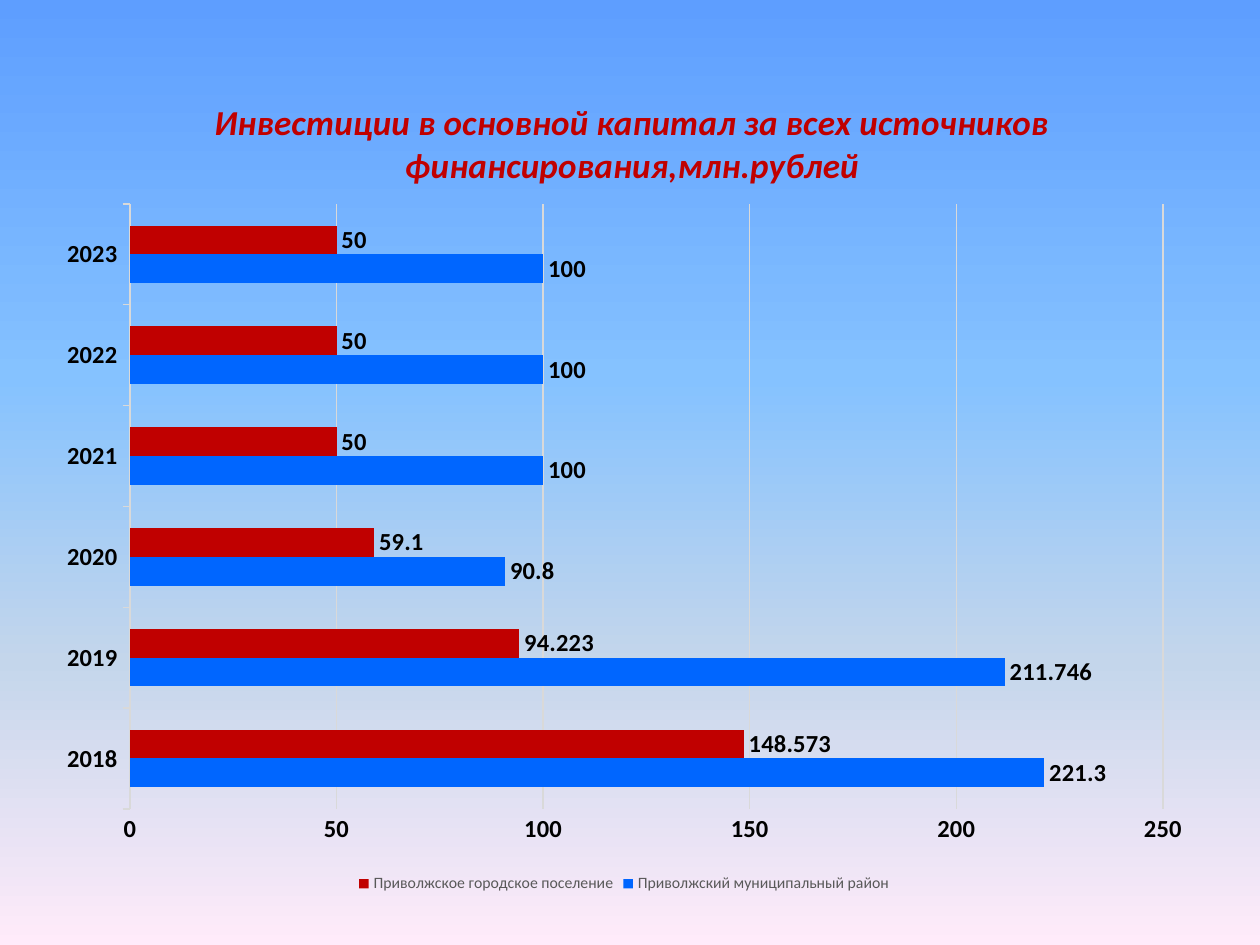
import dataclasses
import typing

import lxml.etree
import pptx
import pptx.chart.data
import pptx.dml.color
import pptx.enum.chart
import pptx.oxml.ns
import pptx.util

qn = pptx.oxml.ns.qn
SCALE = 914400 / 126


@dataclasses.dataclass(frozen=True)
class Theme:
    font: str = "Calibri"
    black: str = "000000"
    red: str = "C00000"
    blue: str = "0066FF"
    grid: str = "D9D9D9"
    legend: str = "595959"
    base_size: int = 10
    title_size: int = 20
    label_size: int = 14
    legend_size: int = 9
    hairline: float = 0.75
    sky: tuple = ((0, "5E9EFF"), (40, "85C2FF"), (70, "C4D6EB"), (100, "FFEBFA"))


@dataclasses.dataclass(frozen=True)
class Box:
    left: int
    top: int
    width: int = 0
    height: int = 0


@dataclasses.dataclass(frozen=True)
class Investment:
    name: str
    values: tuple
    color: str


THEME = Theme()
CHART = Box(44, 55, 1160, 843)
TITLE = Box(208, 91)
PLOT = Box(130, 204, 1033, 605)
YEARS = [str(year) for year in range(2018, 2024)]
INVESTMENTS = (
    Investment("Приволжский муниципальный район",
               (221.3, 211.746, 90.8, 100, 100, 100), THEME.blue),
    Investment("Приволжское городское поселение",
               (148.573, 94.223, 59.1, 50, 50, 50), THEME.red),
)


def px(length: int) -> int:
    return round(length * SCALE)


def rgb(color: str) -> pptx.dml.color.RGBColor:
    return pptx.dml.color.RGBColor.from_string(color)


def apply(target: typing.Any, values: dict) -> None:
    for name, value in values.items():
        setattr(target, name, value)


def style_font(font: typing.Any, size: int, color: str, **extra: bool) -> None:
    apply(font, {"name": THEME.font, "size": pptx.util.Pt(size), **extra})
    font.color.rgb = rgb(color)


def style_line(line: typing.Any) -> None:
    line.color.rgb = rgb(THEME.grid)
    line.width = pptx.util.Pt(THEME.hairline)


def paint_background(page: typing.Any) -> None:
    fill = page.background.fill
    fill.gradient()
    fill.gradient_angle = 270
    stops = page.element.find(".//" + qn("a:gsLst"))
    for stop in list(stops):
        stops.remove(stop)
    for position, color in THEME.sky:
        stop = lxml.etree.SubElement(stops, qn("a:gs"), pos=str(position * 1000))
        lxml.etree.SubElement(stop, qn("a:srgbClr"), val=color)


def place(element: typing.Any, index: int, box: Box, inner: bool = False) -> None:
    for old in element.findall(qn("c:layout")):
        element.remove(old)
    layout = lxml.etree.Element(qn("c:layout"))
    element.insert(index, layout)
    manual = lxml.etree.SubElement(layout, qn("c:manualLayout"))
    settings = {"layoutTarget": "inner"} if inner else {}
    settings |= {"xMode": "edge", "yMode": "edge",
                 "x": round((box.left - CHART.left) / CHART.width, 4),
                 "y": round((box.top - CHART.top) / CHART.height, 4)}
    if inner:
        settings |= {"w": round(box.width / CHART.width, 4),
                     "h": round(box.height / CHART.height, 4)}
    for name, value in settings.items():
        lxml.etree.SubElement(manual, qn("c:" + name), val=str(value))


def add_investment_chart(page: typing.Any) -> None:
    data = pptx.chart.data.CategoryChartData()
    data.categories = YEARS
    for investment in INVESTMENTS:
        data.add_series(investment.name, investment.values)
    chart = page.shapes.add_chart(
        pptx.enum.chart.XL_CHART_TYPE.BAR_CLUSTERED,
        px(CHART.left), px(CHART.top), px(CHART.width), px(CHART.height), data,
    ).chart
    style_font(chart.font, THEME.base_size, THEME.black)

    chart.has_title = True
    para = chart.chart_title.text_frame.paragraphs[0]
    span = para.add_run()
    span.text = "Инвестиции в основной капитал за всех источников финансирования,млн.рублей"
    style_font(span.font, THEME.title_size, THEME.red, bold=True, italic=True)
    chart.chart_title.include_in_layout = False

    chart.has_legend = True
    apply(chart.legend, {"position": pptx.enum.chart.XL_LEGEND_POSITION.BOTTOM,
                         "include_in_layout": False})
    style_font(chart.legend.font, THEME.legend_size, THEME.legend)

    marks = pptx.enum.chart.XL_TICK_MARK
    years, amounts = chart.category_axis, chart.value_axis
    for axis in (years, amounts):
        style_font(axis.tick_labels.font, THEME.label_size, THEME.black, bold=True)
    apply(years, {"major_tick_mark": marks.OUTSIDE, "has_major_gridlines": False})
    style_line(years.format.line)
    apply(amounts, {"major_tick_mark": marks.NONE, "has_major_gridlines": True,
                    "minimum_scale": 0, "maximum_scale": 250, "major_unit": 50})
    amounts.format.line.fill.background()
    style_line(amounts.major_gridlines.format.line)

    plot = chart.plots[0]
    apply(plot, {"gap_width": 150, "overlap": 0, "vary_by_categories": False})
    for series, investment in zip(plot.series, INVESTMENTS):
        series.format.fill.solid()
        series.format.fill.fore_color.rgb = rgb(investment.color)
        labels = series.data_labels
        apply(labels, {"show_value": True,
                       "position": pptx.enum.chart.XL_LABEL_POSITION.OUTSIDE_END})
        style_font(labels.font, THEME.label_size, THEME.black, bold=True)

    root = chart.element
    place(root.find(".//" + qn("c:title")), 1, TITLE)
    place(root.find(".//" + qn("c:plotArea")), 0, PLOT, inner=True)


def main() -> None:
    deck = pptx.Presentation()
    apply(deck, {"slide_width": px(1260), "slide_height": px(945)})
    page = deck.slides.add_slide(deck.slide_layouts[6])
    paint_background(page)
    add_investment_chart(page)
    deck.save("out.pptx")


if __name__ == "__main__":
    main()
